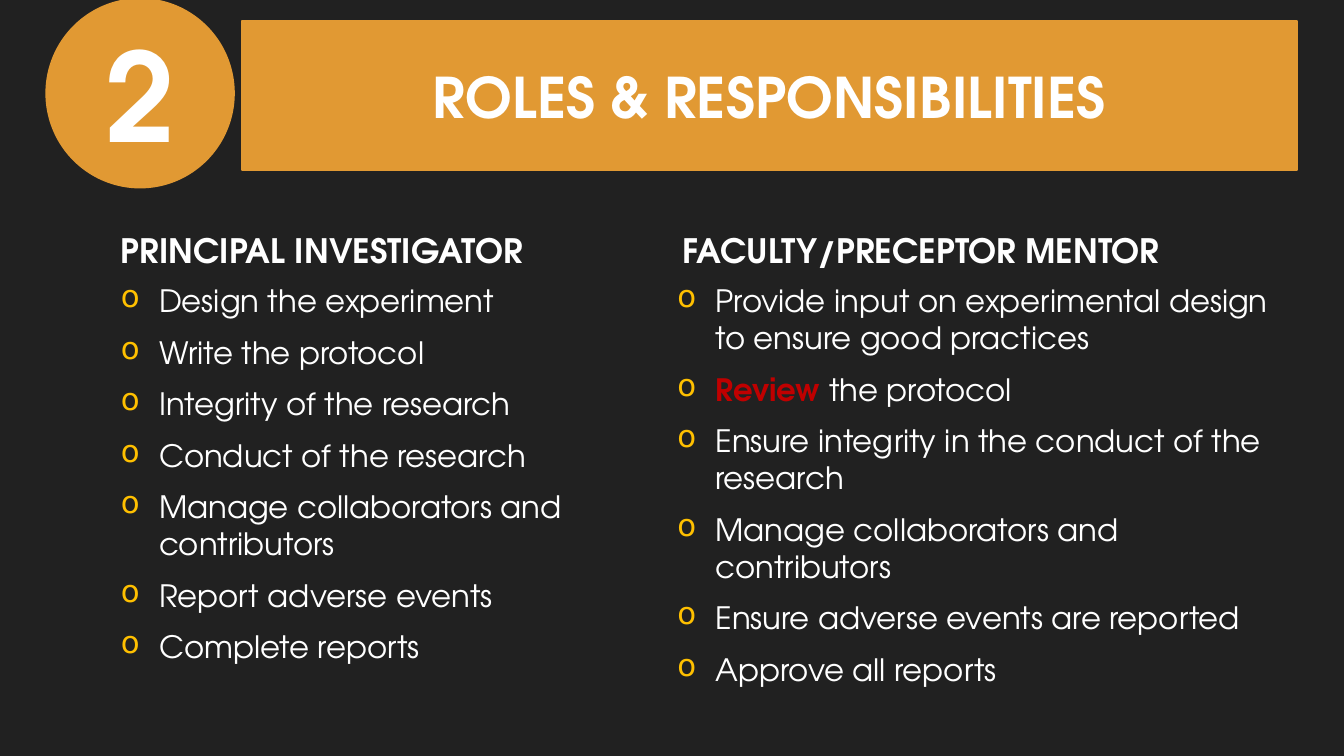
from dataclasses import dataclass

from lxml.etree import SubElement
from pptx import Presentation
from pptx.dml.color import RGBColor as Rgb
from pptx.enum.shapes import MSO_SHAPE as Shape
from pptx.enum.text import MSO_ANCHOR as Anchor, MSO_AUTO_SIZE as Fit, PP_ALIGN as Align
from pptx.oxml import parse_xml
from pptx.oxml.ns import nsdecls, qn
from pptx.util import Inches, Pt


@dataclass(frozen=True)
class Theme:
    font: str = "TeX Gyre Adventor"
    back: str = "212121"
    accent: str = "E19933"
    text: str = "FFFFFF"
    bullet: str = "FFC000"
    alert: str = "C00000"
    number: int = 88
    title: int = 40
    head: int = 24
    body: int = 22
    line: float = 1.35


THEME = Theme()
WIDE, HIGH = 13.33, 7.5
HEAD_H = 0.52
INDENT = 0.38

DUTIES = [
    "Design the experiment",
    "Write the protocol",
    "Integrity of the research",
    "Conduct of the research",
    "Manage collaborators and contributors",
    "Report adverse events",
    "Complete reports",
]
# A pair is an alert word and the rest of its line.
SUPPORT = [
    "Provide input on experimental design to ensure good practices",
    ("Review", " the protocol"),
    "Ensure integrity in the conduct of the research",
    "Manage collaborators and contributors",
    "Ensure adverse events are reported",
    "Approve all reports",
]


def place(shape, box):
    shape.left, shape.top, shape.width, shape.height = map(Inches, box)


def paint(shape):
    shape.fill.solid()
    shape.fill.fore_color.rgb = Rgb.from_string(THEME.accent)
    shape.line.color.rgb = Rgb.from_string(THEME.accent)
    shape.line.width = Pt(THEME.line)


def write(para, text, size, color=THEME.text, bold=False, align=None):
    run = para.add_run()
    run.text = text
    font = run.font
    font.name, font.size, font.bold = THEME.font, Pt(size), bold
    font.color.rgb = Rgb.from_string(color)
    if align is not None:
        para.alignment = align


def space(para, size):
    para.space_before = Pt(0.2 * size)
    para.space_after = Pt(6)


def mark(para):
    """Give a paragraph its hanging bullet."""
    props = para._p.get_or_add_pPr()
    props.set("marL", str(Inches(INDENT)))
    props.set("indent", str(-Inches(INDENT)))
    color = SubElement(props, qn("a:buClr"))
    SubElement(color, qn("a:srgbClr"), val=THEME.bullet)
    SubElement(props, qn("a:buChar"), char="o")


def add_frame(slide, box):
    frame = slide.shapes.add_textbox(*map(Inches, box)).text_frame
    frame.word_wrap = True
    return frame


def add_badge(slide, box, number):
    badge = slide.shapes.add_shape(Shape.OVAL, *map(Inches, box))
    badge.shadow.inherit = False
    paint(badge)
    frame = badge.text_frame
    frame.vertical_anchor = Anchor.MIDDLE
    write(frame.paragraphs[0], number, THEME.number, bold=True, align=Align.CENTER)


def add_banner(slide, box, text):
    """Turn the title placeholder into a rounded bar."""
    title = slide.shapes.title
    place(title, box)
    title._element.spPr.append(parse_xml(
        f'<a:prstGeom {nsdecls("a")} prst="roundRect"><a:avLst/></a:prstGeom>'))
    paint(title)
    frame = title.text_frame
    frame.auto_size = Fit.NONE
    frame.vertical_anchor = Anchor.MIDDLE
    write(frame.paragraphs[0], text, THEME.title, bold=True, align=Align.CENTER)


def add_role(slide, box, head, items, shift=0):
    """Place a heading, set in by shift, above its bulleted list."""
    left, top, width, height = box
    para = add_frame(slide, (left + shift, top, width - shift, HEAD_H)).paragraphs[0]
    space(para, THEME.head)
    write(para, head, THEME.head, bold=True)

    frame = add_frame(slide, (left, top + HEAD_H, width, height - HEAD_H))
    for i, item in enumerate(items):
        para = frame.add_paragraph() if i else frame.paragraphs[0]
        space(para, THEME.body)
        mark(para)
        alert, rest = item if isinstance(item, tuple) else ("", item)
        if alert:
            write(para, alert, THEME.body, color=THEME.alert, bold=True)
        write(para, rest, THEME.body)


def add_roles(deck):
    slide = deck.slides.add_slide(deck.slide_layouts[5])
    fill = slide.background.fill
    fill.solid()
    fill.fore_color.rgb = Rgb.from_string(THEME.back)
    add_badge(slide, (0.46, -0.01, 1.86, 1.87), "2")
    add_banner(slide, (2.4, 0.21, 10.46, 1.48), "ROLES & RESPONSIBILITIES")
    add_role(slide, (1.1, 2.23, 5.27, 4.52), "PRINCIPAL INVESTIGATOR", DUTIES)
    add_role(slide, (6.62, 2.23, 6.23, 4.52), "FACULTY/PRECEPTOR MENTOR", SUPPORT,
             shift=0.05)


def main():
    deck = Presentation()
    deck.slide_width, deck.slide_height = Inches(WIDE), Inches(HIGH)
    add_roles(deck)
    deck.save("out.pptx")


if __name__ == "__main__":
    main()
